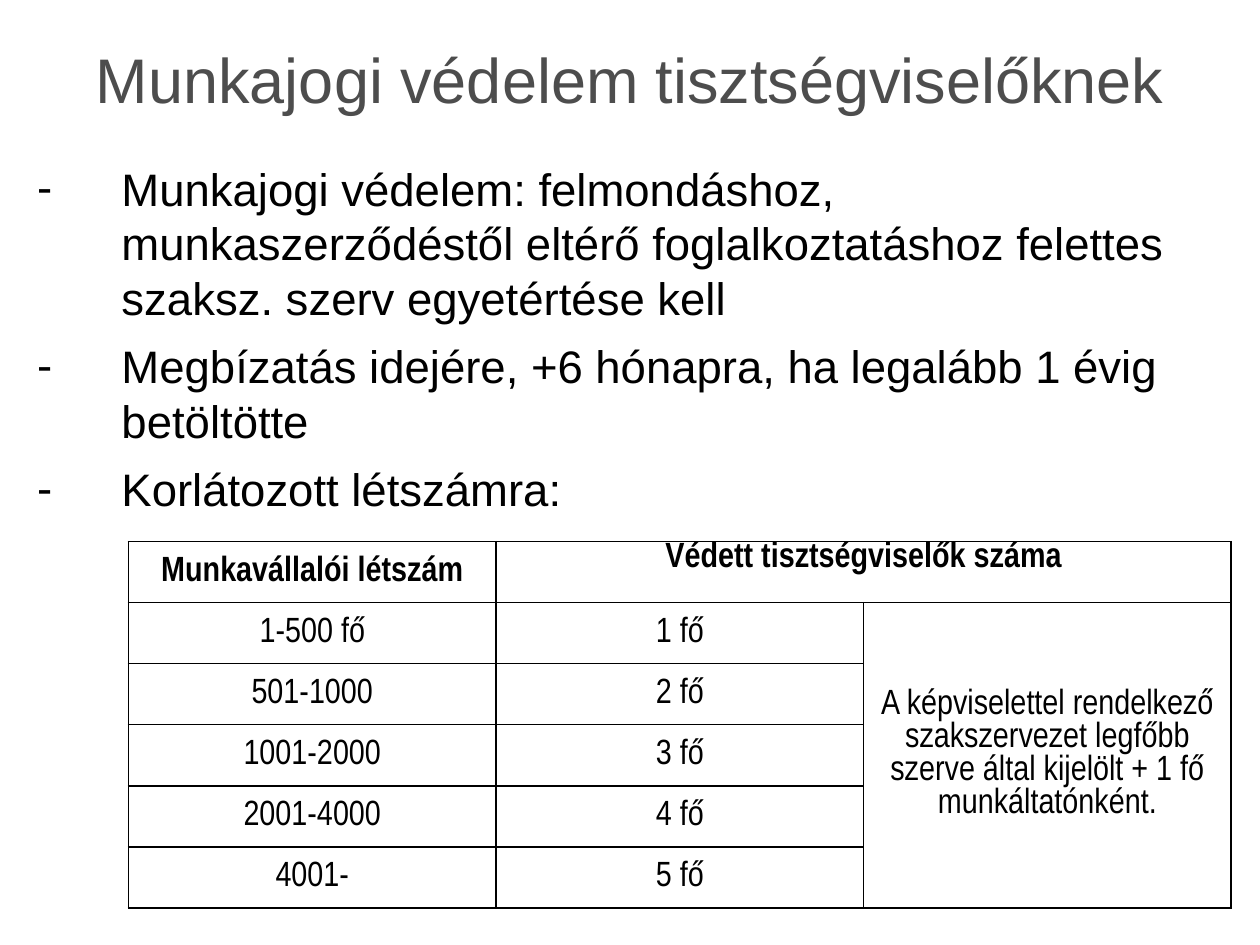
from dataclasses import dataclass

from lxml import etree
from pptx import Presentation
from pptx.dml.color import RGBColor
from pptx.enum.text import MSO_ANCHOR, PP_ALIGN
from pptx.oxml.ns import qn
from pptx.util import Cm, Pt

CENTER, LEFT = PP_ALIGN.CENTER, PP_ALIGN.LEFT
TOP, MIDDLE = MSO_ANCHOR.TOP, MSO_ANCHOR.MIDDLE
TITLE_ONLY = 5


@dataclass(frozen=True)
class Theme:
    """Colours, fonts and type sizes of the deck."""
    ink: RGBColor = RGBColor(0, 0, 0)
    heading: RGBColor = RGBColor(0x4D, 0x4D, 0x4D)
    font: str = "Arial"
    table_font: str = "Arial Narrow"
    title_size: int = Pt(36)
    body_size: int = Pt(26)
    table_size: int = Pt(20)
    rule: int = Pt(1)


THEME = Theme()
TITLE = "Munkajogi védelem tisztségviselőknek"
POINTS = [
    "Munkajogi védelem: felmondáshoz, munkaszerződéstől eltérő foglalkoztatáshoz felettes szaksz. szerv egyetértése kell",
    "Megbízatás idejére, +6 hónapra, ha legalább 1 évig betöltötte",
    "Korlátozott létszámra:",
]
HEADERS = ["Munkavállalói létszám", "Védett tisztségviselők száma"]
HEADCOUNTS = ["1-500 fő", "501-1000", "1001-2000", "2001-4000", "4001-"]
EXTRA = "A képviselettel rendelkező szakszervezet legfőbb szerve által kijelölt + 1 fő munkáltatónként."


def apply(target, values):
    """Set every attribute named in a dict of format values."""
    for name, value in values.items():
        setattr(target, name, value)


def format_para(para, name, size, color, bold=False, **layout):
    """Format the type and layout of a paragraph."""
    apply(para, {"line_spacing": 1.0, **layout})
    apply(para.font, {"name": name, "size": size, "bold": bold})
    para.font.color.rgb = color


def add_title(page, text):
    """Fill and place the title placeholder."""
    title = page.shapes.title
    apply(title, {"left": Cm(0), "top": Cm(0.18), "width": Cm(25.4), "height": Cm(2.8)})
    title.text_frame.text = text
    apply(title.text_frame, {"vertical_anchor": MIDDLE, "word_wrap": True})
    format_para(title.text_frame.paragraphs[0], THEME.font, THEME.title_size,
                THEME.heading, alignment=CENTER)


def add_dash(para):
    """Give a paragraph a dash bullet with a hanging indent."""
    properties = para._p.get_or_add_pPr()
    properties.set("marL", str(Cm(1.7)))
    properties.set("indent", str(-Cm(1.7)))
    etree.SubElement(properties, qn("a:buFont")).set("typeface", THEME.font)
    etree.SubElement(properties, qn("a:buChar")).set("char", "-")


def add_points(page, points):
    """Add the list of dashed points."""
    box = page.shapes.add_textbox(Cm(0.5), Cm(3.12), Cm(24), Cm(14.4))
    frame = box.text_frame
    frame.word_wrap = True
    for index, text in enumerate(points):
        para = frame.paragraphs[0] if index == 0 else frame.add_paragraph()
        para.text = text
        add_dash(para)
        format_para(para, THEME.font, THEME.body_size, THEME.ink, alignment=LEFT,
                    space_before=Pt(1.3 if index else 0), space_after=Pt(6.5))


def add_borders(cell):
    """Draw a thin rule on all four sides of a cell."""
    properties = cell._tc.get_or_add_tcPr()
    for index, side in enumerate(("lnL", "lnR", "lnT", "lnB")):
        line = etree.Element(qn(f"a:{side}"), w=str(THEME.rule))
        fill = etree.SubElement(line, qn("a:solidFill"))
        etree.SubElement(fill, qn("a:srgbClr")).set("val", str(THEME.ink))
        properties.insert(index, line)


def fill_cell(cell, text, bold=False, anchor=MIDDLE):
    """Write centred text in a cell."""
    cell.text = text
    cell.vertical_anchor = anchor
    format_para(cell.text_frame.paragraphs[0], THEME.table_font, THEME.table_size,
                THEME.ink, bold, alignment=CENTER)


def add_headcount_table(page):
    """Add the table of protected officers by headcount."""
    rows = len(HEADCOUNTS) + 1
    frame = page.shapes.add_table(rows, 3, Cm(2.59), Cm(10.92), Cm(22.23), Cm(7.38))
    table = frame.table
    apply(table, {"first_row": False, "horz_banding": False})
    for column in table.columns:
        column.width = Cm(7.41)
    for row in table.rows:
        row.height = Cm(1.23)
    for cell in table.iter_cells():
        apply(cell, {"margin_left": Cm(0.18), "margin_right": Cm(0.18),
                     "margin_top": 0, "margin_bottom": 0})
        cell.fill.background()
        add_borders(cell)
    table.cell(0, 1).merge(table.cell(0, 2))
    table.cell(1, 2).merge(table.cell(rows - 1, 2))
    fill_cell(table.cell(0, 0), HEADERS[0], bold=True)
    fill_cell(table.cell(0, 1), HEADERS[1], bold=True, anchor=TOP)
    fill_cell(table.cell(1, 2), EXTRA)
    for number, headcount in enumerate(HEADCOUNTS, start=1):
        fill_cell(table.cell(number, 0), headcount)
        fill_cell(table.cell(number, 1), f"{number} fő")


def main():
    """Build and save the deck."""
    deck = Presentation()
    apply(deck, {"slide_width": Cm(25.4), "slide_height": Cm(19.05)})
    page = deck.slides.add_slide(deck.slide_layouts[TITLE_ONLY])
    add_title(page, TITLE)
    add_points(page, POINTS)
    add_headcount_table(page)
    deck.save("out.pptx")


if __name__ == "__main__":
    main()
